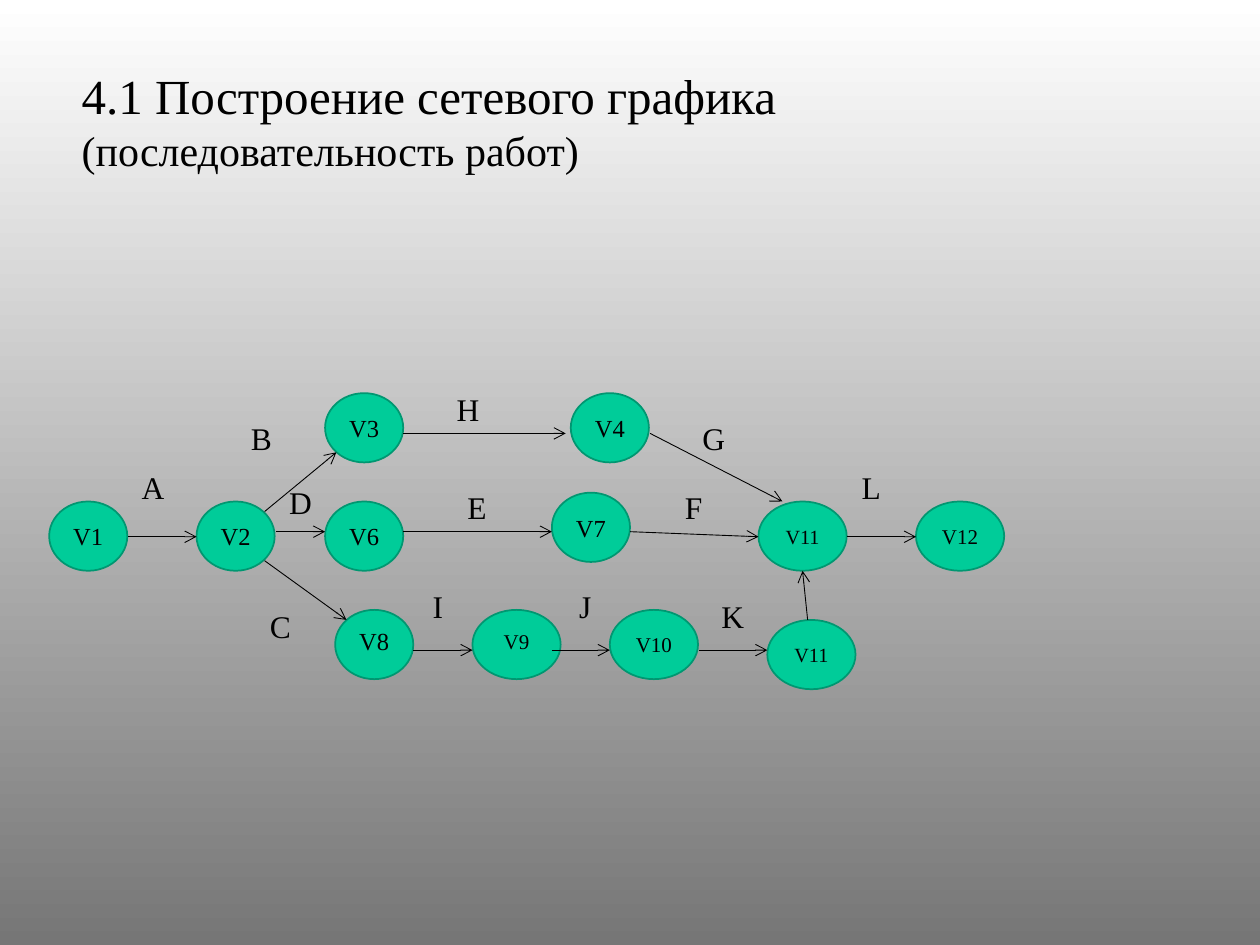
from lxml import etree
from pptx import Presentation
from pptx import util as u
from pptx.dml.color import RGBColor
from pptx.enum import shapes, text
from pptx.oxml.ns import qn

COLORS = {"top": "FFFFFF", "bottom": "767676", "node": "00CC99",
          "rim": "009771", "ink": "000000"}
FONT = "Times New Roman"
NODE_HEIGHT, LETTER_WIDTH = 0.55, 0.39
NARROW, WIDE = 0.62, 0.7

# Events: label, x, y, width, text size, bottom inset that lifts the label
EVENTS = [
    ("V1", 0, 1.01, NARROW, 14, 0), ("V2", 1.17, 1.01, NARROW, 14, 0),
    ("V3", 2.19, 0.15, NARROW, 14, 0), ("V4", 4.14, 0.15, NARROW, 14, 0),
    ("V6", 2.19, 1.01, NARROW, 14, 0), ("V7", 3.99, 0.94, NARROW, 14, 0),
    ("V8", 2.27, 1.87, NARROW, 14, 0.06), ("V9", 3.36, 1.87, WIDE, 12, 0.06),
    ("V10", 4.45, 1.87, WIDE, 12, 0), ("V11", 5.63, 1.01, WIDE, 11.5, 0),
    ("V11", 5.7, 1.95, WIDE, 11.5, 0), ("V12", 6.88, 1.01, WIDE, 12, 0),
]

# Activities: letter, its x and y
LETTERS = [
    ("A", 0.63, 0.62), ("B", 1.49, 0.23), ("C", 1.64, 1.72),
    ("D", 1.8, 0.74), ("E", 3.2, 0.78), ("F", 4.92, 0.78),
    ("G", 5.08, 0.23), ("H", 3.13, 0), ("I", 2.89, 1.56),
    ("J", 4.06, 1.56), ("K", 5.23, 1.64), ("L", 6.33, 0.62),
]

# Arrows: start x, y, end x, y
ARROWS = [
    (0.63, 1.29, 1.17, 1.29),  # A
    (1.71, 1.09, 2.28, 0.62),  # B
    (1.71, 1.48, 2.36, 1.95),  # C
    (1.8, 1.25, 2.19, 1.25),   # D
    (2.81, 1.25, 3.99, 1.25),  # E
    (4.61, 1.25, 5.63, 1.29),  # F
    (4.77, 0.47, 5.82, 1.01),  # G
    (2.81, 0.47, 4.1, 0.47),   # H
    (2.89, 2.19, 3.36, 2.19),  # I
    (3.99, 2.19, 4.45, 2.19),  # J
    (5.16, 2.19, 5.7, 2.19),   # K
    (6.33, 1.29, 6.88, 1.29),  # L
    (6.02, 1.95, 5.98, 1.56),  # lower V11 to upper V11
]


def color(name):
    return RGBColor.from_string(COLORS[name])


def add_run(paragraph, words, size):
    run = paragraph.add_run()
    run.text = words
    for name, value in {"name": FONT, "size": u.Pt(size)}.items():
        setattr(run.font, name, value)
    run.font.color.rgb = color("ink")


def center_label(shape, words, size, lift=0):
    frame = shape.text_frame
    settings = {"margin_left": 0, "margin_right": 0, "margin_top": 0,
                "margin_bottom": u.Inches(lift), "word_wrap": True,
                "vertical_anchor": text.MSO_ANCHOR.MIDDLE}
    for name, value in settings.items():
        setattr(frame, name, value)
    frame.paragraphs[0].alignment = text.PP_ALIGN.CENTER
    add_run(frame.paragraphs[0], words, size)


def paint_background(slide):
    fill = slide.background.fill
    fill.gradient()
    fill.gradient_angle = 270
    for stop, name, position in zip(fill.gradient_stops, ("top", "bottom"), (0, 1)):
        stop.color.rgb = color(name)
        stop.position = position


def add_title(slide, left, top, width, height):
    title = slide.shapes.add_textbox(*map(u.Inches, (left, top, width, height)))
    title.text_frame.word_wrap = True
    heading = title.text_frame.paragraphs[0]
    add_run(heading, "4.1 Построение сетевого графика ", 28)
    add_run(heading, "(последовательность работ)", 24)


def add_event(slide, left, top, width, label, size, lift):
    event = slide.shapes.add_shape(
        shapes.MSO_SHAPE.OVAL,
        *map(u.Inches, (left, top, width, NODE_HEIGHT)))
    event.shadow.inherit = False
    event.fill.solid()
    event.fill.fore_color.rgb = color("node")
    event.line.color.rgb = color("rim")
    event.line.width = u.Pt(1)
    center_label(event, label, size, lift)


def add_arrow(slide, *ends):
    arrow = slide.shapes.add_connector(
        shapes.MSO_CONNECTOR.STRAIGHT, *map(u.Inches, ends))
    arrow.line.color.rgb = color("ink")
    arrow.line.width = u.Pt(0.5)
    etree.SubElement(arrow.line._get_or_add_ln(), qn("a:tailEnd"), type="arrow")
    etree.SubElement(arrow._element.spPr, qn("a:effectLst"))


def add_network(slide, left, top):
    for label, x, y, width, size, lift in EVENTS:
        add_event(slide, left + x, top + y, width, label, size, lift)
    for x1, y1, x2, y2 in ARROWS:
        add_arrow(slide, left + x1, top + y1, left + x2, top + y2)
    for letter, x, y in LETTERS:
        activity = slide.shapes.add_textbox(
            *map(u.Inches, (left + x, top + y, LETTER_WIDTH, NODE_HEIGHT)))
        center_label(activity, letter, 18)


def main():
    deck = Presentation()
    deck.slide_width, deck.slide_height = u.Inches(10), u.Inches(7.5)
    slide = deck.slides.add_slide(deck.slide_layouts[6])
    paint_background(slide)
    add_title(slide, 0.55, 0.47, 6.88, 0.98)
    add_network(slide, 0.39, 2.97)
    deck.save("out.pptx")


if __name__ == "__main__":
    main()
